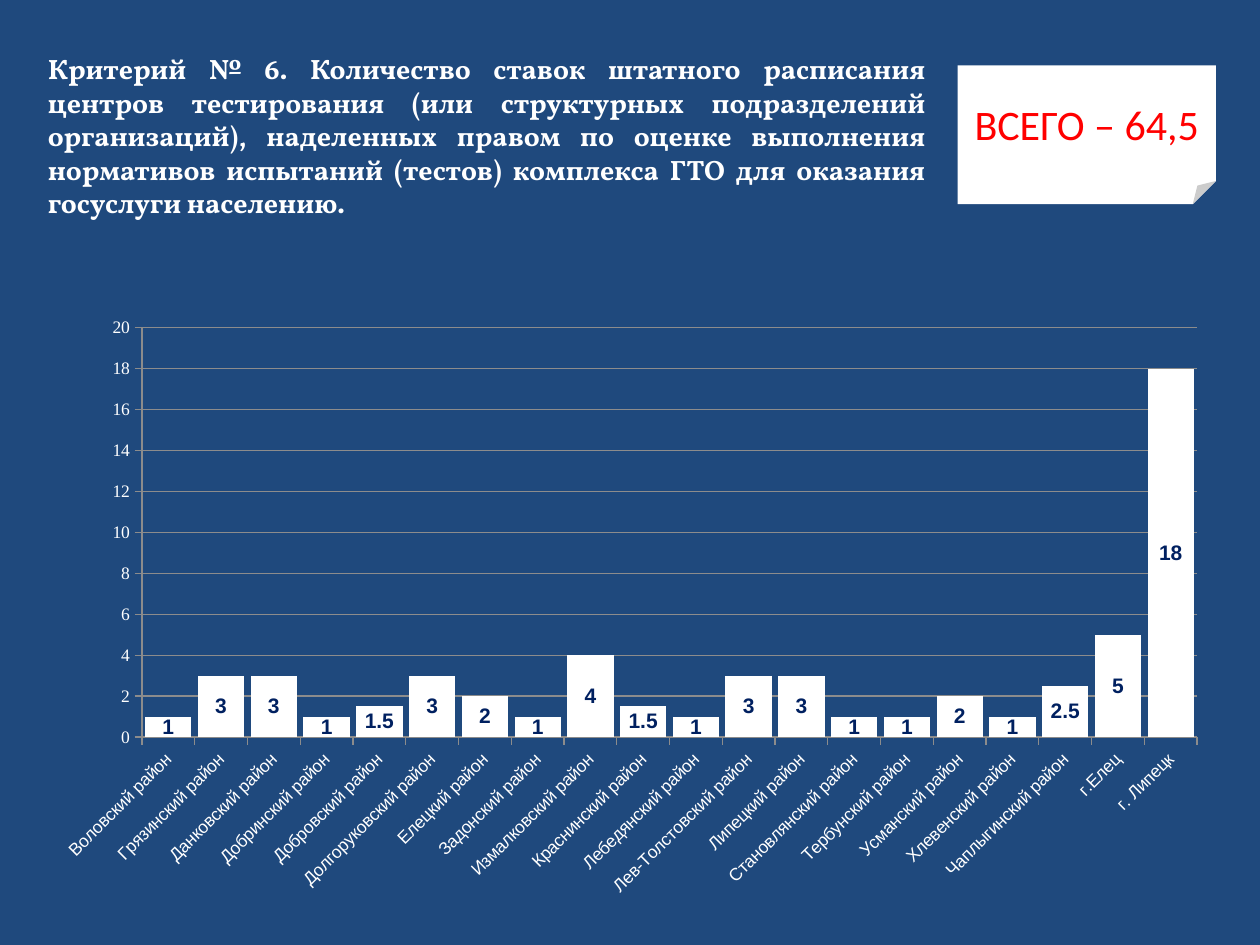
from lxml import etree
from pptx import Presentation
from pptx.chart.data import CategoryChartData
from pptx.dml.color import RGBColor
from pptx.enum.chart import XL_CHART_TYPE as ChartType, XL_LABEL_POSITION as LabelPosition, XL_TICK_MARK as TickMark
from pptx.enum.shapes import MSO_SHAPE as Shape
from pptx.enum.text import MSO_ANCHOR as Anchor, MSO_AUTO_SIZE as AutoSize, PP_ALIGN as Align
from pptx.oxml import parse_xml
from pptx.oxml.ns import nsdecls, qn
from pptx.util import Inches, Pt

NAVY = RGBColor(0x1F, 0x49, 0x7D)
DARK_BLUE = RGBColor(0x00, 0x20, 0x60)
WHITE = RGBColor(0xFF, 0xFF, 0xFF)
RED = RGBColor(0xFF, 0x00, 0x00)
GRAY = RGBColor(0x8C, 0x8C, 0x8C)

TITLE = (
    "Критерий № 6. Количество ставок штатного расписания центров тестирования "
    "(или структурных подразделений организаций), наделенных правом по оценке "
    "выполнения нормативов испытаний (тестов) комплекса ГТО для оказания "
    "госуслуги населению."
)
POSITIONS = {
    "Воловский район": 1, "Грязинский район": 3, "Данковский район": 3,
    "Добринский район": 1, "Добровский район": 1.5, "Долгоруковский район": 3,
    "Елецкий район": 2, "Задонский район": 1, "Измалковский район": 4,
    "Краснинский район": 1.5, "Лебедянский район": 1, "Лев-Толстовский район": 3,
    "Липецкий район": 3, "Становлянский район": 1, "Тербунский район": 1,
    "Усманский район": 2, "Хлевенский район": 1, "Чаплыгинский район": 2.5,
    "г.Елец": 5, "г. Липецк": 18,
}


def set_font(font, name, size, color, bold=False):
    font.name, font.size, font.bold = name, Pt(size), bold
    font.color.rgb = color


def write(shape, text, align=Align.LEFT, anchor=Anchor.TOP, **font_format):
    frame = shape.text_frame
    frame.word_wrap = True
    frame.auto_size = AutoSize.NONE
    frame.vertical_anchor = anchor
    paragraph = frame.paragraphs[0]
    paragraph.alignment = align
    run = paragraph.add_run()
    run.text = text
    set_font(run.font, **font_format)


def fill_chart(chart, color):
    """Paint the chart area and the plot area in one colour."""
    xml = (f'<c:spPr {nsdecls("c", "a")}><a:solidFill><a:srgbClr val="{color}"/>'
           '</a:solidFill><a:ln><a:noFill/></a:ln></c:spPr>')
    chart_part = chart._chartSpace.find(qn("c:chart"))
    chart_part.addnext(parse_xml(xml))
    chart_part.find(qn("c:plotArea")).append(parse_xml(xml))


def place_plot(chart, **shares):
    """Fix the inner plot area as shares of the chart's size."""
    plot_area = chart._chartSpace.find(qn("c:chart")).find(qn("c:plotArea"))
    for old in plot_area.findall(qn("c:layout")):
        plot_area.remove(old)
    layout = etree.Element(qn("c:layout"))
    manual = etree.SubElement(layout, qn("c:manualLayout"))
    settings = {"layoutTarget": "inner", "xMode": "edge", "yMode": "edge", **shares}
    for tag, value in settings.items():
        etree.SubElement(manual, qn(f"c:{tag}")).set("val", str(value))
    plot_area.insert(0, layout)


class SlideBuilder:
    """Holds the slide and its style; boxes are in inches."""

    def __init__(self, presentation, background):
        self.slide = presentation.slides.add_slide(presentation.slide_layouts[5])
        self.slide.background.fill.solid()
        self.slide.background.fill.fore_color.rgb = background
        self.background = background

    def title(self, text, box):
        title = self.slide.shapes.title
        title.left, title.top, title.width, title.height = map(Inches, box)
        write(title, text, align=Align.JUSTIFY, name="Vollkorn", size=16,
              color=WHITE, bold=True)

    def note(self, text, box):
        note = self.slide.shapes.add_shape(Shape.FOLDED_CORNER, *map(Inches, box))
        note.shadow.inherit = False
        note.fill.solid()
        note.fill.fore_color.rgb = WHITE
        note.line.fill.background()
        write(note, text, align=Align.CENTER, anchor=Anchor.MIDDLE,
              name="Calibri", size=24, color=RED)

    def style_axis(self, axis, font_name):
        axis.major_tick_mark, axis.minor_tick_mark = TickMark.OUTSIDE, TickMark.NONE
        axis.format.line.color.rgb = GRAY
        set_font(axis.tick_labels.font, font_name, 10, WHITE)

    def column_chart(self, values, box):
        data = CategoryChartData()
        data.categories = list(values)
        data.add_series("Series 1", list(values.values()))
        chart = self.slide.shapes.add_chart(
            ChartType.COLUMN_STACKED, *map(Inches, box), data).chart
        chart.has_legend = chart.has_title = False
        fill_chart(chart, self.background)
        chart.font.name, chart.font.size = "Times New Roman", Pt(14)
        place_plot(chart, x=0.09, y=0.04, w=0.89, h=0.68)

        self.style_axis(chart.category_axis, "Arial")
        text_body = chart.category_axis._element.find(qn("c:txPr")).find(qn("a:bodyPr"))
        text_body.set("rot", "-2700000")
        text_body.set("vert", "horz")
        value_axis = chart.value_axis
        self.style_axis(value_axis, "Times New Roman")
        value_axis.minimum_scale, value_axis.maximum_scale = 0, 20
        value_axis.major_unit = 2
        value_axis.major_gridlines.format.line.color.rgb = GRAY

        plot = chart.plots[0]
        plot.gap_width, plot.overlap = 14, 100
        plot.vary_by_categories = False
        series = plot.series[0]
        series.format.fill.solid()
        series.format.fill.fore_color.rgb = WHITE
        labels = series.data_labels
        labels.show_value = True
        labels.position = LabelPosition.CENTER
        set_font(labels.font, "Arial", 12, DARK_BLUE, bold=True)


def main():
    presentation = Presentation()
    presentation.slide_width, presentation.slide_height = Inches(10), Inches(7.5)
    builder = SlideBuilder(presentation, NAVY)
    builder.title(TITLE, (0.28, 0.36, 7.17, 1.45))
    builder.note("ВСЕГО – 64,5", (7.6, 0.52, 2.05, 1.1))
    builder.column_chart(POSITIONS, (0.28, 2.41, 9.41, 4.78))
    presentation.save("out.pptx")


if __name__ == "__main__":
    main()
